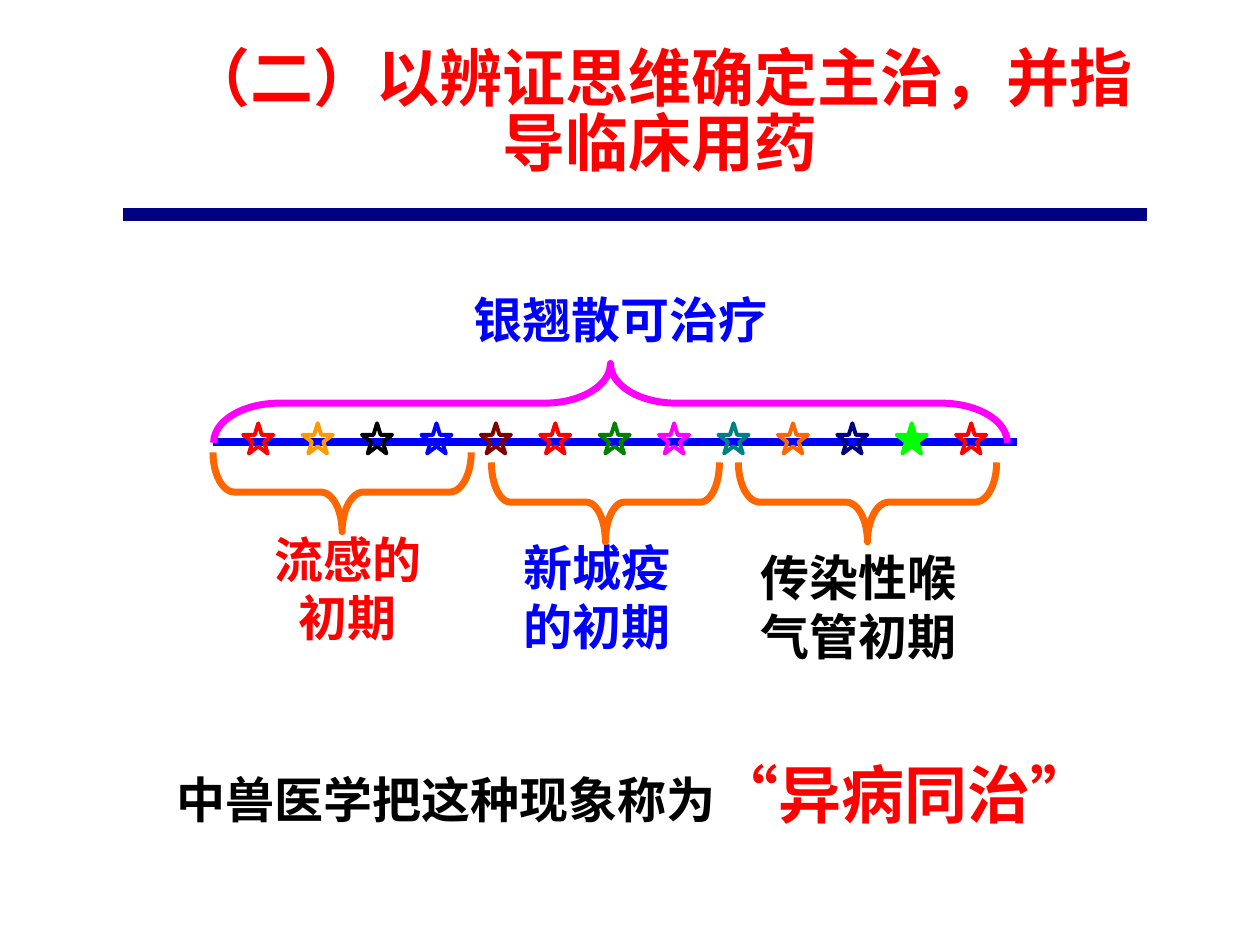
from lxml import etree
from pptx import Presentation, util as u
from pptx.dml.color import RGBColor
from pptx.enum import shapes, text
from pptx.oxml.ns import qn

RED, BLUE, NAVY, BLACK = "FF0000", "0000FF", "000080", "000000"
ORANGE, MAGENTA, GREEN = "FF6600", "FF00FF", "00FF00"
CJK = "Noto Sans CJK SC"


def rgb(value):
    return RGBColor.from_string(value)


class Board:
    """Draws styled elements on one slide, placed on a grid of 100 columns by 75 rows."""

    def __init__(self, deck):
        self.slide = deck.slides.add_slide(deck.slide_layouts[5])
        self.column = deck.slide_width / 100
        self.row = deck.slide_height / 75

    def box(self, left, top, width, height):
        return (u.Emu(round(left * self.column)), u.Emu(round(top * self.row)),
                u.Emu(round(width * self.column)), u.Emu(round(height * self.row)))

    def style(self, run, size, color, face=CJK):
        run.font.size, run.font.bold, run.font.name = u.Pt(size), True, face
        run.font.color.rgb = rgb(color)
        latin = run.font._element.find(qn("a:latin"))
        east_asian = etree.Element(qn("a:ea"), typeface=CJK)
        latin.addnext(east_asian)

    def title(self, place, wording):
        heading = self.slide.shapes.title
        heading.left, heading.top, heading.width, heading.height = self.box(*place)
        frame = heading.text_frame
        frame.text = wording
        frame.auto_size = text.MSO_AUTO_SIZE.NONE
        frame.vertical_anchor = text.MSO_ANCHOR.MIDDLE
        paragraph = frame.paragraphs[0]
        paragraph.alignment, paragraph.line_spacing = text.PP_ALIGN.CENTER, 0.85
        self.style(paragraph.runs[0], 36, RED, "Arial Narrow")

    def label(self, place, *parts, align=text.PP_ALIGN.CENTER):
        frame = self.slide.shapes.add_textbox(*self.box(*place)).text_frame
        frame.word_wrap = True
        frame.auto_size = text.MSO_AUTO_SIZE.SHAPE_TO_FIT_TEXT
        paragraph = frame.paragraphs[0]
        paragraph.alignment = align
        for wording, size, color in parts:
            run = paragraph.add_run()
            run.text = wording
            self.style(run, size, color)

    def rule(self, left, right, level, color, weight):
        start_x, y, span, _ = self.box(left, level, right - left, 0)
        rule = self.slide.shapes.add_connector(
            shapes.MSO_CONNECTOR.STRAIGHT, start_x, y, start_x + span, y)
        rule.line.color.rgb, rule.line.width = rgb(color), u.Pt(weight)
        etree.SubElement(rule._element.spPr, qn("a:effectLst"))

    def outline(self, preset, place, color, weight, fill=None):
        figure = self.slide.shapes.add_shape(preset, *self.box(*place))
        figure.shadow.inherit = False
        figure.line.color.rgb, figure.line.width = rgb(color), u.Pt(weight)
        if fill:
            figure.fill.solid()
            figure.fill.fore_color.rgb = rgb(fill)
        else:
            figure.fill.background()
        return figure

    def brace(self, left, top, span, color, turn, curve, depth=6.3):
        upright = (left + (span - depth) / 2, top + (depth - span) / 2, depth, span)
        brace = self.outline(shapes.MSO_SHAPE.LEFT_BRACE, upright, color, 4)
        brace.rotation = turn
        brace.adjustments[0], brace.adjustments[1] = curve, 0.5

    def star(self, left, top, color, fill=None):
        self.outline(shapes.MSO_SHAPE.STAR_5_POINT, (left, top, 2.4, 2.4), color, 2.25, fill)


def main():
    deck = Presentation()
    deck.slide_width, deck.slide_height = u.Inches(10), u.Inches(7.5)
    board = Board(deck)
    board.title((13, 3.6, 78.8, 11), "（二）以辨证思维确定主治，并指导临床用药")
    board.rule(9.8, 91, 17, NAVY, 7.5)

    left, center = text.PP_ALIGN.LEFT, text.PP_ALIGN.CENTER
    diseases = [
        ("流感的初期", RED, (20.1, 41.5, 15, 10.3), center, (16.9, 35.9, 20.5), 0.27),
        ("传染性喉气管初期", BLACK, (59.4, 43, 20.5, 10.3), left, (58.6, 36.7, 20.5), 0.27),
        ("新城疫的初期", BLUE, (40.6, 42.2, 15.7, 10.3), left, (39, 36.7, 18.1), 0.24),
    ]
    for disease, color, place, align, reach, curve in diseases:
        board.label(place, (disease, 28, color), align=align)
        board.brace(*reach, ORANGE, 270, curve)

    board.rule(16.9, 80.7, 35.1, BLUE, 4.5)
    board.label((32.7, 22.5, 33.1, 5.7), ("银翘散可治疗", 28, BLUE))
    board.brace(16.95, 28.85, 63, MAGENTA, 90, 0.83)

    symptoms = [RED, "FF9900", BLACK, BLUE, "800000", RED, "008000",
                MAGENTA, "008080", ORANGE, NAVY, GREEN, RED]
    for position, color in enumerate(symptoms):
        board.star(19.3 + 4.715 * position, 33.6, color, GREEN if color == GREEN else None)

    board.label((6.7, 59.5, 87.4, 7),
                ("中兽医学把这种现象称为", 28, BLACK), ("“异病同治”", 36, RED))
    deck.save("out.pptx")


if __name__ == "__main__":
    main()
